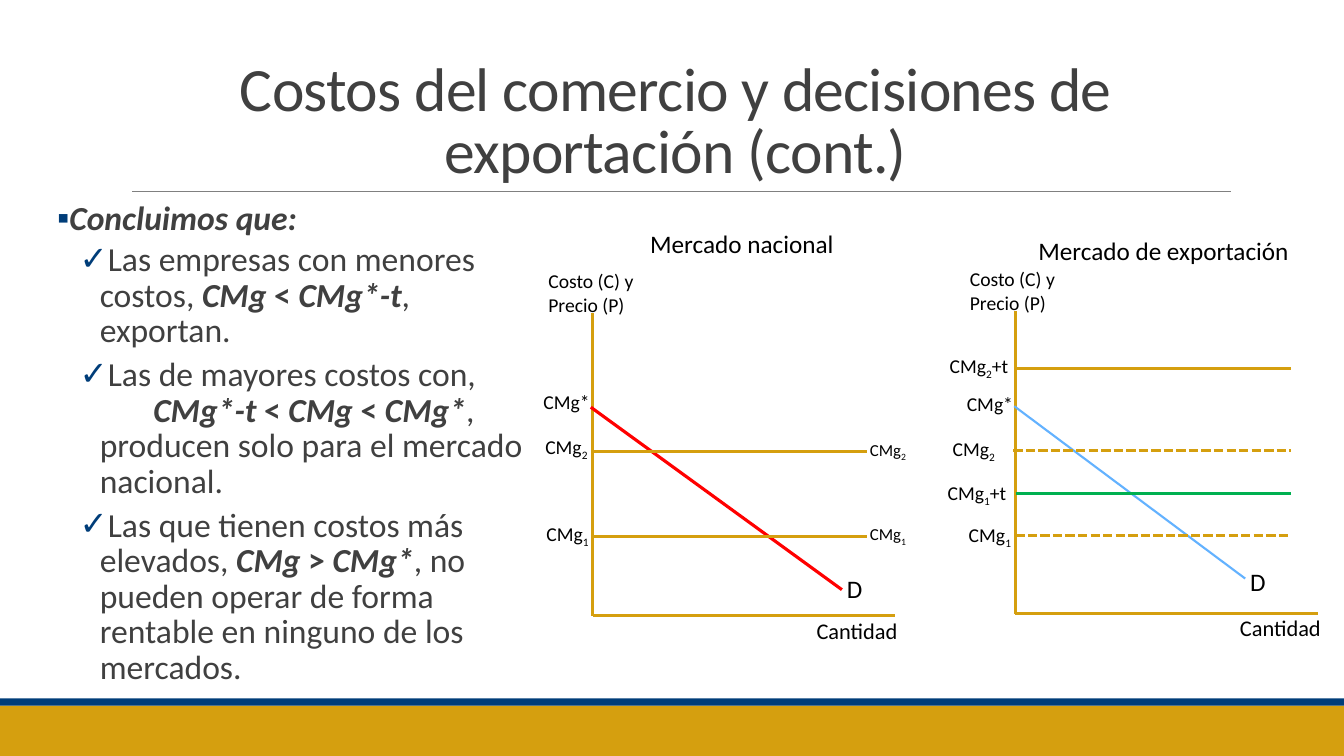
from lxml import etree
from pptx import Presentation
from pptx.dml.color import RGBColor
from pptx.enum.dml import MSO_LINE
from pptx.enum.shapes import MSO_CONNECTOR, MSO_SHAPE
from pptx.enum.text import MSO_ANCHOR, PP_ALIGN
from pptx.oxml.ns import qn
from pptx.util import Inches, Pt

COLORS = {"gold": "D59F0F", "navy": "003D79", "gray": "808080", "text": "404040",
          "black": "000000", "red": "FF0000", "blue": "63B2FF", "green": "00B050"}

# Runs are (text, style): b bold, i italic, s subscript
TITLE = "Costos del comercio y decisiones de exportación (cont.)"
HEADING = [("Concluimos que:", "bi")]
POINTS = [
    [("Las empresas con menores costos, ", ""), ("CMg ", "bi"), ("< ", "b"),
     ("CMg*-t", "bi"), (", exportan.", "")],
    [("Las de mayores costos con,\v\t", ""), ("CMg*-t ", "bi"), ("< ", "b"),
     ("CMg ", "bi"), ("< ", "b"), ("CMg*", "bi"),
     (", producen solo para el mercado nacional.", "")],
    [("Las que tienen costos más elevados, ", ""), ("CMg", "bi"), (" > ", "b"),
     ("CMg*", "bi"),
     (", no pueden operar de forma rentable en ninguno de los mercados.", "")],
]

CMG, CMG1, CMG2 = ("CMg", ""), [("CMg", ""), ("1", "s")], [("CMg", ""), ("2", "s")]
CMG_STAR, PLUS_T = [("CMg*", "")], ("+t", "")

# Levels are (x start, x end, y, color, dashed); labels are (runs, x, y, width, size)
MARKETS = [
    {"name": "Mercado nacional", "name_box": (6.35, 2.22, 2.43, 0.4),
     "origin": (5.88, 6.11), "axis_label_box": (5.34, 2.62, 1.13, 0.57),
     "demand": (5.86, 4.04, 8.35, 5.85), "demand_style": ("red", 2.25),
     "demand_label": (8.3, 5.64), "quantity_label": (8, 6.07),
     "levels": [(5.86, 8.6, 5.32, "gold", False), (5.87, 8.6, 4.48, "gold", False)],
     "labels": [(CMG_STAR, 5.29, 3.82, 0.79, 14), (CMG2, 5.31, 4.27, 0.7, 14),
                (CMG1, 5.32, 5.13, 0.68, 14), (CMG2, 8.53, 4.31, 0.88, 12),
                (CMG1, 8.53, 5.15, 0.88, 12)]},
    {"name": "Mercado de exportación", "name_box": (10.2, 2.29, 2.74, 0.4),
     "origin": (10.07, 6.09), "axis_label_box": (9.52, 2.6, 1.29, 0.57),
     "demand": (10.06, 4.03, 12.35, 5.74), "demand_style": ("blue", 1.5),
     "demand_label": (12.3, 5.57), "quantity_label": (12.2, 6.04),
     "levels": [(10.06, 12.8, 3.66, "gold", False), (10.05, 12.8, 4.47, "gold", True),
                (10.08, 12.8, 4.9, "green", False), (10.07, 12.8, 5.31, "gold", True)],
     "labels": [(CMG2 + [PLUS_T], 9.32, 3.46, 1.13, 14), (CMG_STAR, 9.49, 3.84, 0.88, 14),
                (CMG2, 9.35, 4.29, 0.7, 14), (CMG1 + [PLUS_T], 9.3, 4.72, 1.13, 14),
                (CMG1, 9.51, 5.14, 1.13, 14)]},
]
AXIS_LENGTH = 3


def rgb(name):
    return RGBColor.from_string(COLORS[name])


def add_band(shapes, top, height, color):
    sp = shapes.add_shape(MSO_SHAPE.RECTANGLE, 0, Inches(top), prs.slide_width, Inches(height))
    sp.shadow.inherit = False
    sp.fill.solid()
    sp.fill.fore_color.rgb = rgb(color)
    sp.line.fill.background()


def add_line(shapes, x1, y1, x2, y2, color="gold", width=2.25, dashed=False):
    line = shapes.add_connector(MSO_CONNECTOR.STRAIGHT, *map(Inches, (x1, y1, x2, y2)))
    line.line.color.rgb = rgb(color)
    line.line.width = Pt(width)
    if dashed:
        line.line.dash_style = MSO_LINE.SQUARE_DOT
    etree.SubElement(line._element.spPr, qn("a:effectLst"))


def add_text(shapes, box, paragraphs, size=14, color="black", align=PP_ALIGN.LEFT,
             anchor=MSO_ANCHOR.TOP, wrap=True, side_inset=0.1, line_spacing=1.0, tracking=0):
    """Add a text box; paragraphs is a string or a list of run lists."""
    if isinstance(paragraphs, str):
        paragraphs = [[(paragraphs, "")]]
    tf = shapes.add_textbox(*map(Inches, box)).text_frame
    tf.word_wrap = wrap
    tf.vertical_anchor = anchor
    tf.margin_left = tf.margin_right = Inches(side_inset)
    for i, runs in enumerate(paragraphs):
        p = tf.add_paragraph() if i else tf.paragraphs[0]
        p.alignment = align
        p.line_spacing = line_spacing
        for text, style in runs:
            for j, piece in enumerate(text.split("\v")):
                if j:
                    p.add_line_break()
                r = p.add_run()
                r.text = piece
                r.font.name = "Calibri"
                r.font.size = Pt(size)
                r.font.color.rgb = rgb(color)
                r.font.bold = "b" in style
                r.font.italic = "i" in style
                if "s" in style:
                    r.font._element.set("baseline", "-25000")
                if tracking:
                    r.font._element.set("spc", str(int(tracking * 100)))
    return tf


def set_bullet(p, char, left, hanging, tab=None):
    pPr = p._p.get_or_add_pPr()
    pPr.set("marL", str(Inches(left)))
    pPr.set("indent", str(-Inches(hanging)))
    color = etree.SubElement(pPr, qn("a:buClr"))
    etree.SubElement(color, qn("a:srgbClr"), val=COLORS["navy"])
    etree.SubElement(pPr, qn("a:buFont"), typeface="Wingdings" if char == "§" else "Calibri")
    etree.SubElement(pPr, qn("a:buChar"), char=char)
    if tab:
        tabs = etree.SubElement(pPr, qn("a:tabLst"))
        etree.SubElement(tabs, qn("a:tab"), pos=str(Inches(tab)), algn="l")


def add_market(shapes, market):
    x, y = market["origin"]
    add_line(shapes, x, y - AXIS_LENGTH, x, y)
    add_line(shapes, x, y, x + AXIS_LENGTH, y)
    add_line(shapes, *market["demand"], *market["demand_style"])
    for start, end, level, color, dashed in market["levels"]:
        add_line(shapes, start, level, end, level, color, dashed=dashed)
    add_text(shapes, market["name_box"], market["name"], size=18)
    add_text(shapes, market["axis_label_box"], "Costo (C) y Precio (P)")
    add_text(shapes, (*market["demand_label"], 1.02, 0.28), "D", size=18)
    add_text(shapes, (*market["quantity_label"], 1.01, 0.37), "Cantidad", size=16, wrap=False)
    for runs, left, top, width, size in market["labels"]:
        add_text(shapes, (left, top, width, 0.34 if size == 14 else 0.3), [runs], size=size)


prs = Presentation()
prs.slide_width, prs.slide_height = Inches(13.33), Inches(7.5)
slide = prs.slides.add_slide(prs.slide_layouts[6])

add_band(slide.shapes, 7, 0.5, "gold")
add_band(slide.shapes, 6.93, 0.07, "navy")
add_line(slide.shapes, 1.31, 1.9, 12.21, 1.9, "gray", 0.5)
add_text(slide.shapes, (1.2, 0.31, 11, 1.59), TITLE, size=44, color="text",
         align=PP_ALIGN.CENTER, anchor=MSO_ANCHOR.BOTTOM, line_spacing=0.85, tracking=-0.5)

body = add_text(slide.shapes, (0.57, 1.96, 4.65, 5.6), [HEADING] + POINTS, size=24,
                color="text", side_inset=0, line_spacing=0.88)
heading, *points = body.paragraphs
heading.space_after = Pt(2)
set_bullet(heading, "▪", 0.1, 0.1)
for p in points:
    p.space_before, p.space_after = Pt(2), Pt(4)
    set_bullet(p, "✓", 0.42, 0.2, tab=0.95)

for market in MARKETS:
    add_market(slide.shapes.add_group_shape().shapes, market)

prs.save("out.pptx")
